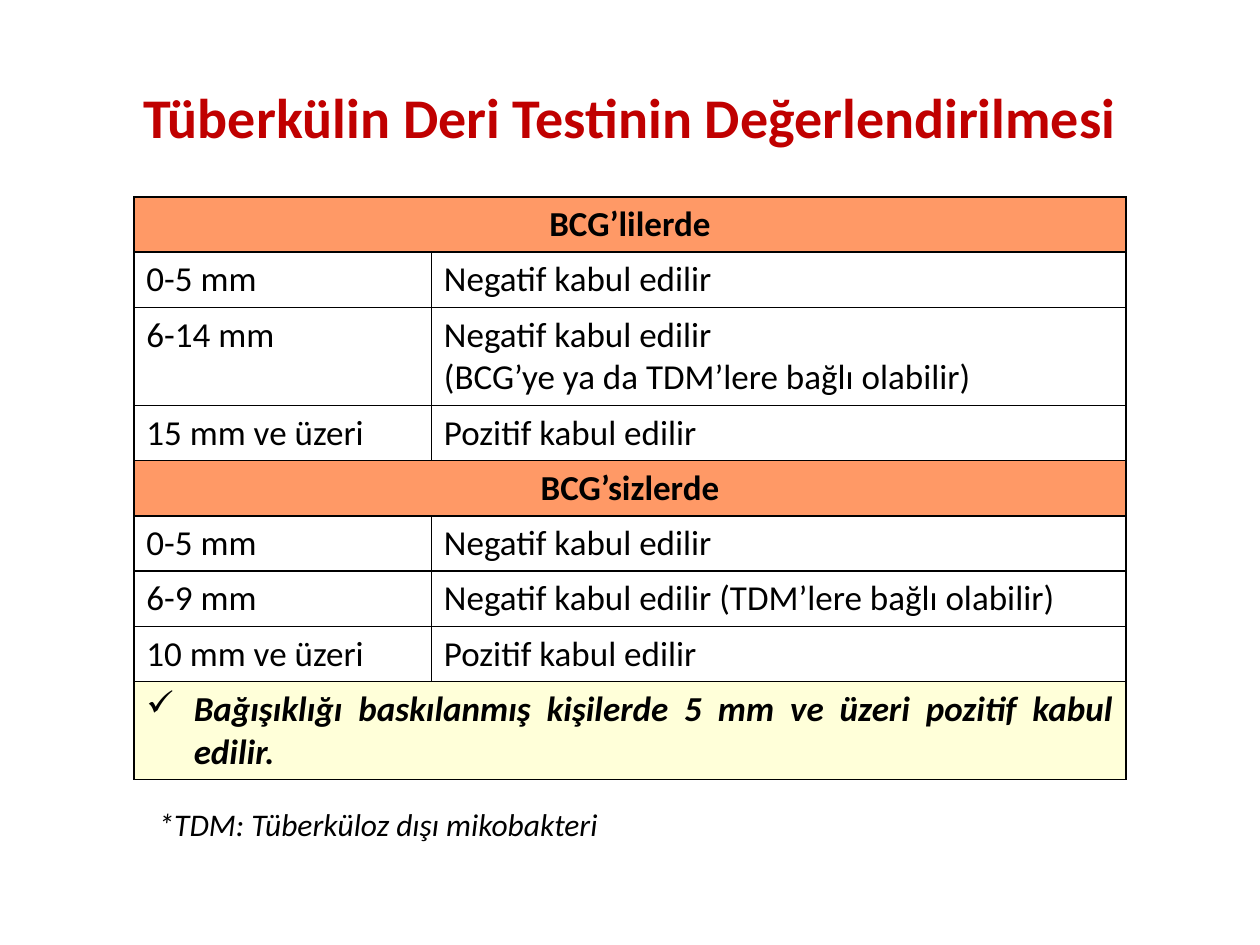
from dataclasses import dataclass

from lxml import etree
from pptx import Presentation
from pptx.dml.color import RGBColor
from pptx.enum import shapes, text
from pptx.oxml import ns
from pptx.util import Pt

ALIGN = text.PP_ALIGN


@dataclass(frozen=True)
class Theme:
    font: str = "Calibri"
    title: str = "C00000"
    ink: str = "000000"
    head: str = "FF9966"
    note: str = "FFFFD9"
    paper: str = "FFFFFF"
    big: float = 32
    body: float = 20
    small: float = 18


@dataclass(frozen=True)
class Row:
    cells: tuple[str, ...]
    kind: str = "body"
    lines: int = 1


THEME = Theme()
ROWS = (
    Row(("BCG’lilerde",), "head"),
    Row(("0-5 mm", "Negatif kabul edilir")),
    Row(("6-14 mm", "Negatif kabul edilir\n(BCG’ye ya da TDM’lere bağlı olabilir)"), lines=2),
    Row(("15 mm ve üzeri", "Pozitif kabul edilir")),
    Row(("BCG’sizlerde",), "head"),
    Row(("0-5 mm", "Negatif kabul edilir")),
    Row(("6-9 mm", "Negatif kabul edilir (TDM’lere bağlı olabilir)")),
    Row(("10 mm ve üzeri", "Pozitif kabul edilir")),
    Row(("Bağışıklığı baskılanmış kişilerde 5 mm ve üzeri pozitif kabul edilir.",), "note", 2),
)
STYLES = {
    "head": (THEME.head, {"bold": True, "align": ALIGN.CENTER}),
    "body": (THEME.paper, {"align": ALIGN.JUSTIFY}),
    "note": (THEME.note, {"bold": True, "italic": True,
                          "align": ALIGN.JUSTIFY, "bullet": "✓"}),
}
WIDTHS = (170, 397)
LINE, PAD = 24.4, 7.2


def write(frame, words: str, *, size: float = THEME.body, color: str = THEME.ink,
          bold: bool = False, italic: bool = False, align=ALIGN.LEFT,
          bullet: str = "") -> None:
    """Fill a text frame, one paragraph for each line of words."""
    frame.text = words
    for para in frame.paragraphs:
        para.alignment = align
        for run in para.runs:
            font = run.font
            font.name, font.size = THEME.font, Pt(size)
            font.bold, font.italic = bold, italic
            font.color.rgb = RGBColor.from_string(color)
        if bullet:
            props = para._p.get_or_add_pPr()
            props.set("marL", str(Pt(27)))
            props.set("indent", str(Pt(-27)))
            etree.SubElement(props, ns.qn("a:buChar"), char=bullet)


def edge(cell) -> None:
    """Draw thin lines on all four sides of a cell."""
    props = cell._tc.get_or_add_tcPr()
    for spot, side in enumerate(("lnL", "lnR", "lnT", "lnB")):
        line = etree.Element(ns.qn(f"a:{side}"), w=str(Pt(1)))
        fill = etree.SubElement(line, ns.qn("a:solidFill"))
        etree.SubElement(fill, ns.qn("a:srgbClr"), val=THEME.ink)
        props.insert(spot, line)


def grid(slide, rows: tuple[Row, ...], left: float, top: float) -> None:
    highs = [row.lines * LINE + PAD for row in rows]
    table = slide.shapes.add_table(len(rows), len(WIDTHS), Pt(left), Pt(top),
                                   Pt(sum(WIDTHS)), Pt(sum(highs))).table
    for col, wide in zip(table.columns, WIDTHS):
        col.width = Pt(wide)
    for i, (row, high) in enumerate(zip(rows, highs)):
        table.rows[i].height = Pt(high)
        color, style = STYLES[row.kind]
        if len(row.cells) == 1:
            table.cell(i, 0).merge(table.cell(i, 1))
        for j in range(len(WIDTHS)):
            cell = table.cell(i, j)
            cell.fill.solid()
            cell.fill.fore_color.rgb = RGBColor.from_string(color)
            edge(cell)
        for j, words in enumerate(row.cells):
            write(table.cell(i, j).text_frame, words, **style)


def title(slide, words: str) -> None:
    frame = slide.shapes.add_textbox(Pt(36), Pt(21.6), Pt(648), Pt(90)).text_frame
    frame.word_wrap = True
    frame.vertical_anchor = text.MSO_ANCHOR.MIDDLE
    write(frame, words, size=THEME.big, color=THEME.title, bold=True, align=ALIGN.CENTER)


def footnote(slide, words: str) -> None:
    box = slide.shapes.add_shape(shapes.MSO_SHAPE.RECTANGLE,
                                 Pt(83.5), Pt(457), Pt(299), Pt(28))
    box.shadow.inherit = False
    box.fill.background()
    box.line.color.rgb = RGBColor.from_string(THEME.paper)
    box.line.width = Pt(0.75)
    frame = box.text_frame
    frame.word_wrap = False
    frame.vertical_anchor = text.MSO_ANCHOR.MIDDLE
    write(frame, words, size=THEME.small, italic=True)


def main() -> None:
    deck = Presentation()
    deck.slide_width, deck.slide_height = Pt(720), Pt(540)
    slide = deck.slides.add_slide(deck.slide_layouts[6])
    title(slide, "Tüberkülin Deri Testinin Değerlendirilmesi")
    grid(slide, ROWS, 76.5, 112.5)
    footnote(slide, "*TDM: Tüberküloz dışı mikobakteri")
    deck.save("out.pptx")


if __name__ == "__main__":
    main()
